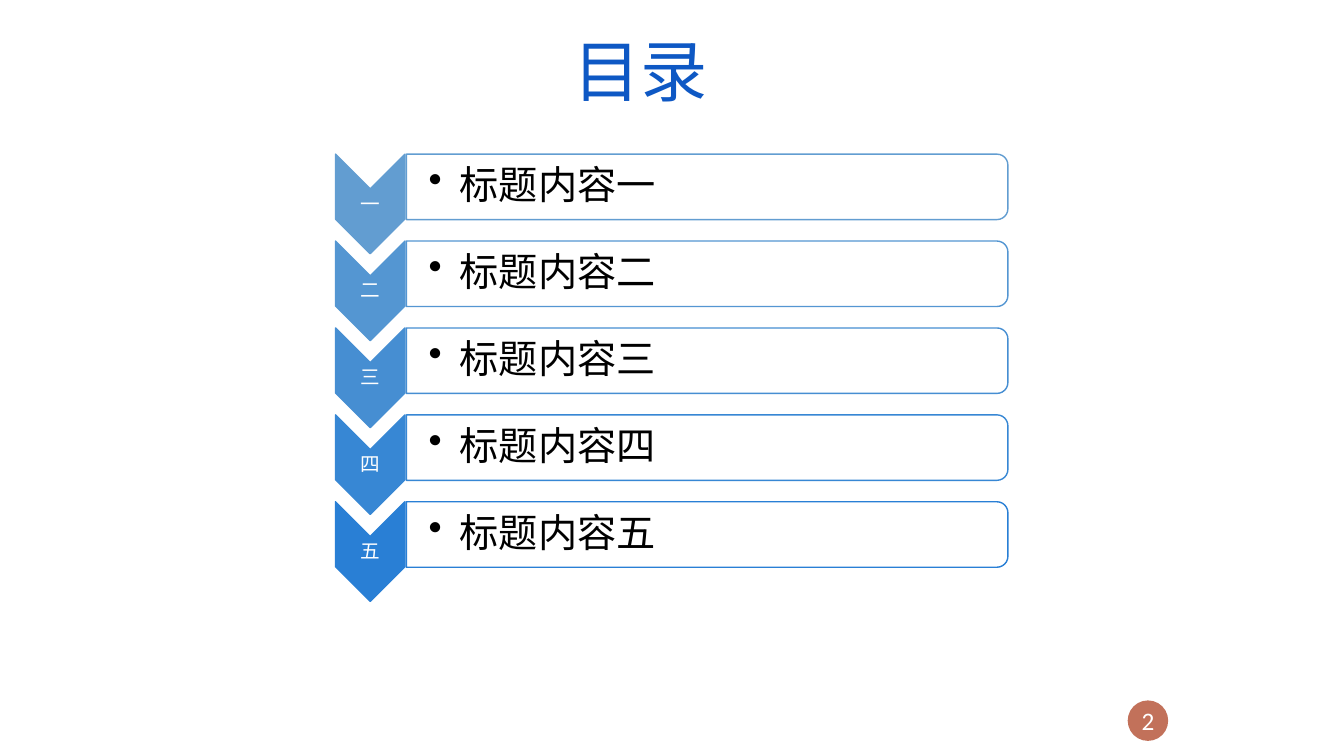
from lxml import etree
from pptx import Presentation
from pptx import util as u
from pptx.dml import color
from pptx.enum import shapes, text
from pptx.oxml import ns

Cm = u.Cm
ENTRIES = [
    ("一", "629DD1"),
    ("二", "5496D2"),
    ("三", "468ED2"),
    ("四", "3787D4"),
    ("五", "297FD5"),
]
ROW_PITCH = 2.19


def rgb(hex_color):
    return color.RGBColor.from_string(hex_color)


def add_filled_shape(slide, kind, center_x, center_y, width, height, fill, line=None, rotation=0):
    """Place a shape by its centre; width and height are those before rotation."""
    shape = slide.shapes.add_shape(
        kind, Cm(center_x - width / 2), Cm(center_y - height / 2), Cm(width), Cm(height))
    shape.rotation = rotation
    shape.shadow.inherit = False
    shape.fill.solid()
    shape.fill.fore_color.rgb = rgb(fill)
    if line:
        shape.line.color.rgb = rgb(line)
        shape.line.width = u.Pt(1)
    else:
        shape.line.fill.background()
    return shape


def set_opacity(shape, percent):
    fill_color = shape.fill._xPr.find(ns.qn("a:solidFill"))[0]
    etree.SubElement(fill_color, ns.qn("a:alpha"), val=str(percent * 1000))


def add_text(slide, left, top, width, height, content, size, font_color,
             left_inset=0.03, inset=0.03, spacing=0.9, bulleted=False):
    box = slide.shapes.add_textbox(Cm(left), Cm(top), Cm(width), Cm(height))
    frame = box.text_frame
    frame.word_wrap = True
    frame.vertical_anchor = text.MSO_ANCHOR.MIDDLE
    frame.margin_left = Cm(left_inset)
    frame.margin_top = frame.margin_right = frame.margin_bottom = Cm(inset)
    paragraph = frame.paragraphs[0]
    paragraph.text = content
    if bulleted:
        add_bullet(paragraph)
    else:
        paragraph.alignment = text.PP_ALIGN.CENTER
    paragraph.line_spacing = spacing
    paragraph.font.name = "Calibri"
    paragraph.font.size = u.Pt(size)
    paragraph.font.color.rgb = rgb(font_color)


def add_bullet(paragraph):
    paragraph.level = 1
    properties = paragraph._p.get_or_add_pPr()
    indent = Cm(0.79)
    properties.set("marL", str(indent))
    properties.set("indent", str(-indent))
    etree.SubElement(properties, ns.qn("a:buChar"), char="•")


def add_entry(slide, offset, numeral, hue):
    """Draw one contents row, offset down from the first one."""
    preset = shapes.MSO_SHAPE
    add_filled_shape(slide, preset.CHEVRON, 9.33, 5.14 + offset, 2.51, 1.75, hue, hue, 90)
    add_text(slide, 8.46, 4.78 + offset, 1.75, 0.76, numeral, 14, "FFFFFF")
    bar = add_filled_shape(slide, preset.ROUND_2_SAME_RECTANGLE, 17.82, 4.71 + offset,
                           1.65, 15.16, "FFFFFF", hue, 90)
    set_opacity(bar, 90)
    add_text(slide, 10.24, 3.96 + offset, 15.09, 1.49, "标题内容" + numeral, 28, "000000",
             left_inset=0.56, inset=0.05, bulleted=True)


def add_page_number(slide, number):
    add_filled_shape(slide, shapes.MSO_SHAPE.OVAL, 28.93, 18.16, 1.02, 1.02, "C2715A")
    add_text(slide, 28.05, 17.65, 1.76, 1.02, number, 18, "FFFFFF", spacing=1.0)


def main():
    presentation = Presentation()
    presentation.slide_width = Cm(33.87)
    presentation.slide_height = Cm(19.05)
    slide = presentation.slides.add_slide(presentation.slide_layouts[6])
    add_page_number(slide, "2")
    add_text(slide, 7.8, 0.46, 16.69, 2.84, "目录", 48, "0E58C4")
    for row, (numeral, hue) in enumerate(ENTRIES):
        add_entry(slide, row * ROW_PITCH, numeral, hue)
    presentation.save("out.pptx")


if __name__ == "__main__":
    main()
